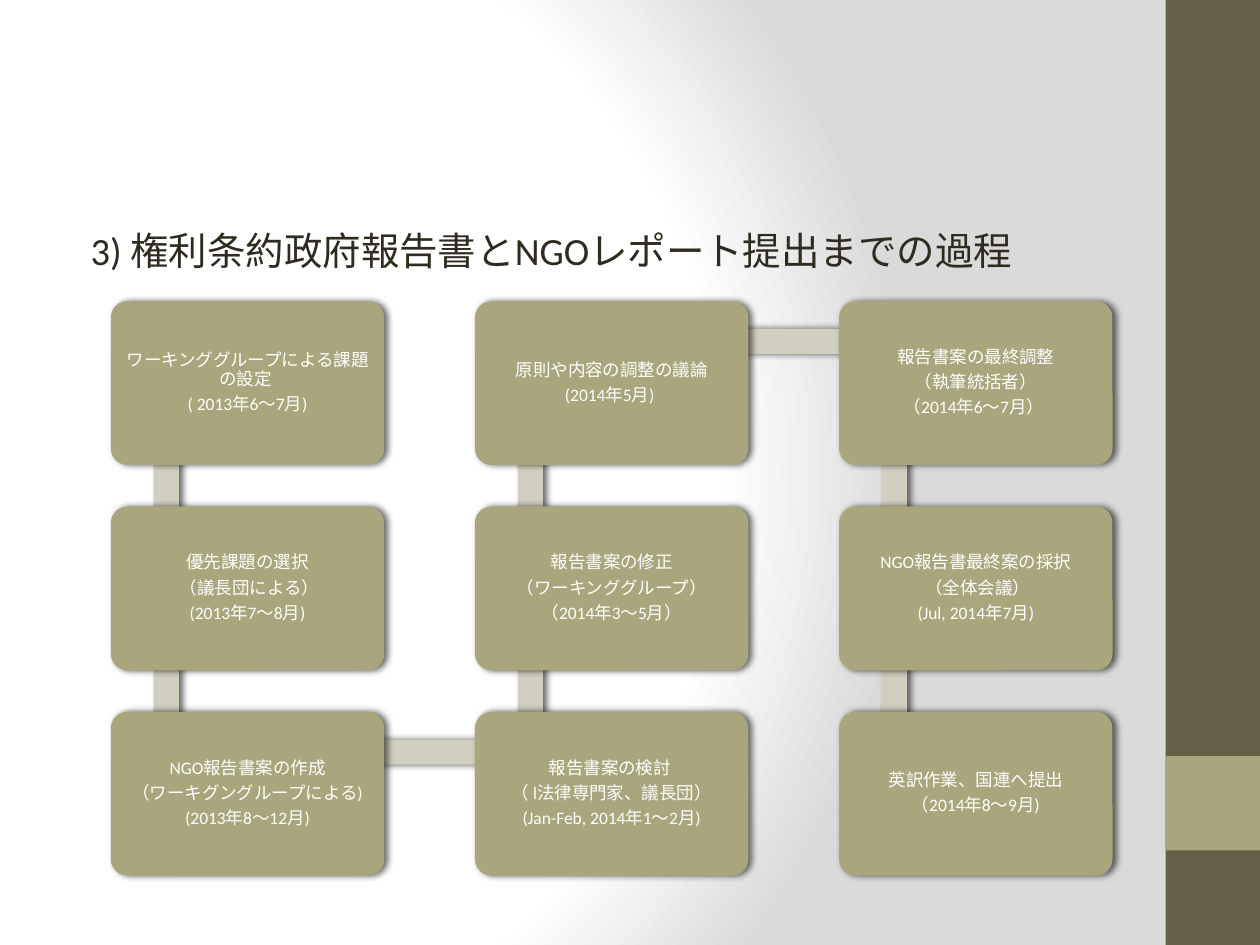
from pptx import Presentation
from pptx.dml.color import RGBColor
from pptx.enum.shapes import MSO_SHAPE
from pptx.enum.text import MSO_ANCHOR, PP_ALIGN
from pptx.oxml import parse_xml
from pptx.oxml.ns import nsdecls, qn
from pptx.util import Inches, Pt

OLIVE, BROWN, PALE = "A9A57C", "675E47", "D1CFBF"

deck = Presentation()
deck.slide_width, deck.slide_height = Inches(10), Inches(7.5)
page = deck.slides.add_slide(deck.slide_layouts[6])


def add_block(kind, left, top, width, height, color, shadow=True):
    block = page.shapes.add_shape(
        kind, Inches(left), Inches(top), Inches(width), Inches(height))
    block.fill.solid()
    block.fill.fore_color.rgb = RGBColor.from_string(color)
    block.line.fill.background()
    block.shadow.inherit = False
    if shadow:
        effects = block.element.spPr.find(qn("a:effectLst"))
        effects.append(parse_xml(
            f'<a:outerShdw {nsdecls("a")} blurRad="{Pt(4)}" dist="{Pt(2)}" '
            'dir="0" rotWithShape="0"><a:srgbClr val="000000">'
            '<a:alpha val="60000"/></a:srgbClr></a:outerShdw>'))
    return block


def write(box, lines, size, color, align=PP_ALIGN.LEFT, anchor=MSO_ANCHOR.TOP,
          before=0, after=0, spacing=1.0):
    frame = box.text_frame
    frame.word_wrap = True
    frame.vertical_anchor = anchor
    for index, line in enumerate(lines):
        para = frame.paragraphs[0] if index == 0 else frame.add_paragraph()
        para.alignment = align
        para.space_before, para.space_after = Pt(before), Pt(after)
        para.line_spacing = spacing
        span = para.add_run()
        span.text = line
        span.font.name = "Calibri"
        span.font.size = Pt(size)
        span.font.color.rgb = RGBColor.from_string(color)


# Background: radial gradient from white to grey
page.background.fill.gradient()
gradient = page.element.find(".//" + qn("a:gradFill"))
stops = "".join(
    f'<a:gs pos="{place * 1000}"><a:srgbClr val="{color}"/></a:gs>'
    for place, color in [(0, "FFFFFF"), (75, "FFFFFF"), (100, "DADADA")])
gradient.getparent().replace(gradient, parse_xml(
    f'<a:gradFill {nsdecls("a")} rotWithShape="1"><a:gsLst>{stops}</a:gsLst>'
    '<a:path path="circle"><a:fillToRect l="20000" t="50000" r="100000" '
    'b="50000"/></a:path></a:gradFill>'))

# Side band
add_block(MSO_SHAPE.RECTANGLE, 9.25, 0, 0.75, 7.5, BROWN, shadow=False)
add_block(MSO_SHAPE.RECTANGLE, 9.25, 6, 0.75, 0.75, OLIVE, shadow=False)

# Heading
heading = page.shapes.add_textbox(
    Inches(0.5), Inches(1.75), Inches(8.33), Inches(0.55))
heading.text_frame.margin_left = Inches(0.22)
write(heading, ["3) 権利条約政府報告書とNGOレポート提出までの過程"], 22, "2F2B20",
      before=4.4)

# Process steps, running down, up and down again through three columns
steps = [
    ["ワーキンググループによる課題の設定 ", "( 2013年6～7月)"],
    ["優先課題の選択", " （議長団による）", "(2013年7～8月)"],
    ["NGO報告書案の作成", "（ワーキグングループによる)", "(2013年8～12月)"],
    ["報告書案の検討 ", "（ l法律専門家、議長団）", "(Jan-Feb, 2014年1～2月)"],
    ["報告書案の修正", "（ワーキンググループ）", "（2014年3～5月）"],
    ["原則や内容の調整の議論", "(2014年5月) "],
    ["報告書案の最終調整", "（執筆統括者）", "（2014年6～7月） "],
    ["NGO報告書最終案の採択", " （全体会議）", "(Jul, 2014年7月)"],
    ["英訳作業、国連へ提出", "（2014年8～9月)"],
]
ROWS, BOX_WIDTH, BOX_HEIGHT, BAR = 3, 2.17, 1.3, 0.2
corners = []
for index in range(len(steps)):
    column, row = divmod(index, ROWS)
    if column % 2:
        row = ROWS - 1 - row
    corners.append((0.88 + 2.89 * column, 2.39 + 1.63 * row))

for index, (lines, (left, top)) in enumerate(zip(steps, corners)):
    # Bar to the next step, partly hidden behind both boxes
    if index + 1 < len(steps):
        next_left, next_top = corners[index + 1]
        across, down = abs(next_left - left), abs(next_top - top)
        add_block(MSO_SHAPE.RECTANGLE,
                  left + 0.44 - (0 if across else BAR / 2),
                  min(top, next_top) + 0.32 - (0 if down else BAR / 2),
                  across or BAR, down or BAR, PALE)
    box = add_block(MSO_SHAPE.ROUNDED_RECTANGLE, left, top,
                    BOX_WIDTH, BOX_HEIGHT, OLIVE)
    box.adjustments[0] = 0.1
    frame = box.text_frame
    frame.margin_left = frame.margin_right = Inches(0.08)
    frame.margin_top = frame.margin_bottom = Inches(0.08)
    write(box, lines, 10, "FFFFFF", align=PP_ALIGN.CENTER,
          anchor=MSO_ANCHOR.MIDDLE, after=3.5, spacing=0.9)

deck.save("out.pptx")
